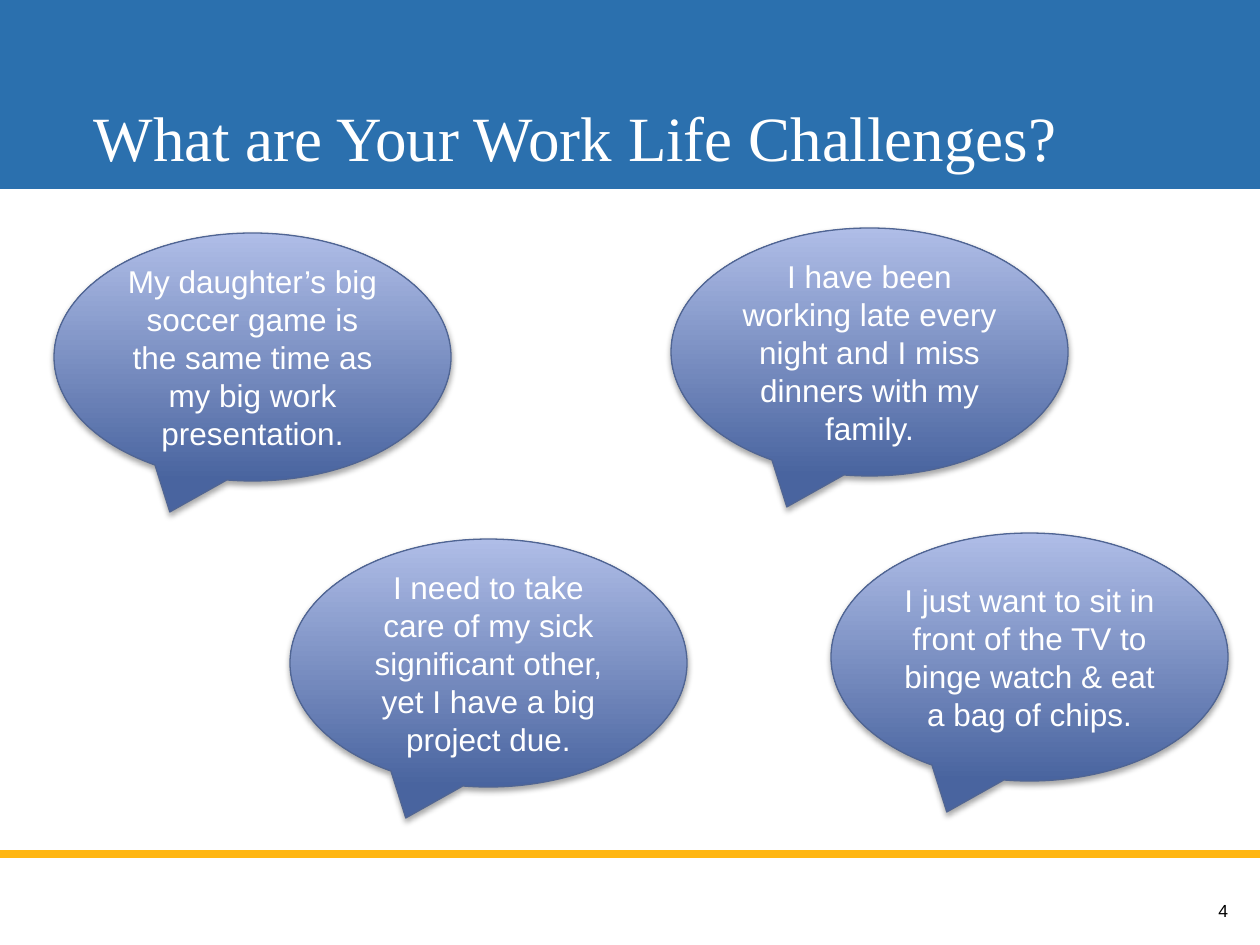
from lxml import etree
from pptx import Presentation
from pptx.dml.color import RGBColor
from pptx.enum.shapes import MSO_SHAPE
from pptx.enum.text import MSO_ANCHOR, PP_ALIGN
from pptx.oxml import parse_xml
from pptx.util import Pt

RECT, BUBBLE = MSO_SHAPE.RECTANGLE, MSO_SHAPE.OVAL_CALLOUT
BOTTOM, MIDDLE = MSO_ANCHOR.BOTTOM, MSO_ANCHOR.MIDDLE
LEFT, CENTER, RIGHT = PP_ALIGN.LEFT, PP_ALIGN.CENTER, PP_ALIGN.RIGHT
SCALE = 914400 / 126  # EMU in one px
SHADOW = (
    '<a:outerShdw xmlns:a="http://schemas.openxmlformats.org/drawingml/2006/main"'
    ' blurRad="40000" dist="23000" dir="5400000" rotWithShape="0">'
    '<a:srgbClr val="000000"><a:alpha val="35000"/></a:srgbClr></a:outerShdw>'
)


def emu(*px):
    return [round(n * SCALE) for n in px]


def write(shape, text, size=18, font="Arial", color="FFFFFF",
          align=CENTER, anchor=MIDDLE, inset=None):
    frame = shape.text_frame
    frame.word_wrap = True
    frame.vertical_anchor = anchor
    if inset is not None:
        frame.margin_left = frame.margin_right = inset
        frame.margin_top = frame.margin_bottom = inset
    para = frame.paragraphs[0]
    para.alignment = align
    run = para.add_run()
    run.text = text
    run.font.size = Pt(size)
    run.font.name = font
    run.font.color.rgb = RGBColor.from_string(color)


deck = Presentation()
deck.slide_width, deck.slide_height = emu(1260, 945)
slide = deck.slides.add_slide(deck.slide_layouts[6])
shapes = slide.shapes

# Footer rule and header band
for top, height, color in [(850, 8, "FFB612"), (0, 189, "2B70AE")]:
    band = shapes.add_shape(RECT, *emu(0, top, 1260, height))
    band.shadow.inherit = False
    band.fill.solid()
    band.fill.fore_color.rgb = RGBColor.from_string(color)
    band.line.fill.background()

# Title and page number
title = shapes.add_textbox(*emu(94, 32, 1072, 142))
write(title, "What are Your Work Life Challenges?", size=36,
      font="Times New Roman", align=LEFT, anchor=BOTTOM, inset=0)
page = shapes.add_textbox(*emu(976, 875, 252, 70))
write(page, "4", size=10, color="000000", align=RIGHT, inset=0)

# Speech bubbles
quotes = [
    (54, 233, "My daughter’s big soccer game is the same time as my big work presentation."),
    (671, 228, "I have been working late every night and I miss dinners with my family."),
    (290, 539, "I need to take care of my sick significant other, yet I have a big project due."),
    (831, 533, "I just want to sit in front of the TV to binge watch & eat a bag of chips."),
]
for left, top, quote in quotes:
    bubble = shapes.add_shape(BUBBLE, *emu(left, top, 397, 248))
    bubble.fill.gradient()
    bubble.fill.gradient_angle = 90
    for stop, color in zip(bubble.fill.gradient_stops, ["49649F", "AFBDE7"]):
        stop.color.rgb = RGBColor.from_string(color)
    bubble.line.color.rgb = RGBColor.from_string("506593")
    bubble.line.width = Pt(0.75)
    bubble.shadow.inherit = False
    effects = bubble.element.spPr.find("{*}effectLst")
    effects.append(parse_xml(etree.tostring(etree.fromstring(SHADOW))))
    write(bubble, quote)

deck.save("out.pptx")
